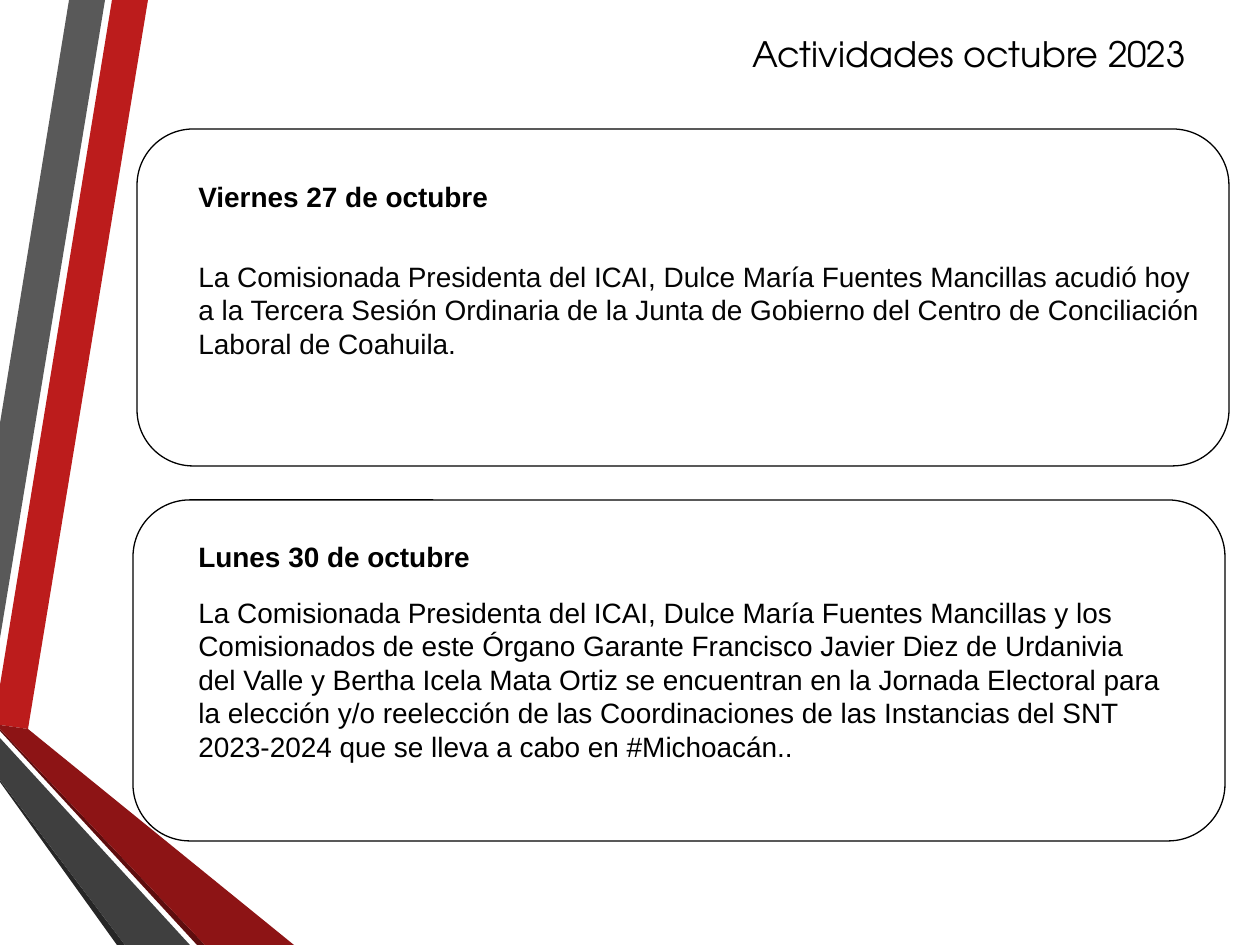
from dataclasses import dataclass

from pptx import Presentation
from pptx import util as u
from pptx.dml.color import RGBColor
from pptx.enum import shapes, text

PX = 914400 / 126  # EMU in one px


@dataclass(frozen=True)
class Theme:
    ink: str = "000000"
    soft_ink: str = "050505"
    red: str = "BC1C1C"
    dark_red: str = "8D1415"
    deep_red: str = "5E0D0E"
    grey: str = "595959"
    dark_grey: str = "3F3F3F"
    deep_grey: str = "262626"
    title_font: str = "TeX Gyre Adventor"
    body_font: str = "Arial"
    title_size: int = 20
    body_size: int = 16
    outline: float = 0.75


@dataclass(frozen=True)
class Box:
    left: int
    top: int
    width: int
    height: int

    def emu(self) -> list[u.Emu]:
        return [u.Emu(round(side * PX))
                for side in (self.left, self.top, self.width, self.height)]


@dataclass(frozen=True)
class Ribbon:
    color: str
    points: list[tuple[int, int]]


@dataclass(frozen=True)
class Activity:
    frame: Box
    date_box: Box
    date: str
    report_box: Box
    report: str
    report_color: str


THEME = Theme()

RIBBONS = [
    Ribbon(THEME.red, [(0, 685), (0, 725), (28, 729), (148, 0), (112, 0)]),
    Ribbon(THEME.grey, [(105, 0), (69, 0), (0, 423), (0, 638)]),
    Ribbon(THEME.deep_grey, [(0, 780), (0, 782), (117, 945), (125, 945)]),
    Ribbon(THEME.deep_red, [(0, 729), (0, 731), (197, 945), (205, 945)]),
    Ribbon(THEME.dark_red,
           [(0, 729), (205, 945), (294, 945), (28, 729), (0, 725)]),
    Ribbon(THEME.dark_grey, [(0, 780), (125, 945), (190, 945), (0, 738)]),
]

ACTIVITIES = [
    Activity(
        Box(137, 129, 1092, 337),
        Box(186, 173, 993, 46), "Viernes 27 de octubre",
        Box(186, 253, 1038, 113),
        "La Comisionada Presidenta del ICAI, Dulce María Fuentes Mancillas "
        "acudió hoy a la Tercera Sesión Ordinaria de la Junta de Gobierno "
        "del Centro de Conciliación Laboral de Coahuila.",
        THEME.soft_ink),
    Activity(
        Box(133, 500, 1092, 341),
        Box(186, 533, 993, 46), "Lunes 30 de octubre",
        Box(186, 589, 993, 183),
        "La Comisionada Presidenta del ICAI, Dulce María Fuentes Mancillas "
        "y los Comisionados de este Órgano Garante Francisco Javier Diez de "
        "Urdanivia del Valle y Bertha Icela Mata Ortiz se encuentran en la "
        "Jornada Electoral para la elección y/o reelección de las "
        "Coordinaciones de las Instancias del SNT 2023-2024 que se lleva a "
        "cabo en #Michoacán..",
        THEME.ink),
]


def draw_ribbon(slide, ribbon: Ribbon) -> None:
    start, *rest = ribbon.points
    builder = slide.shapes.build_freeform(*start, scale=PX)
    builder.add_line_segments(rest, close=True)
    band = builder.convert_to_shape()
    band.shadow.inherit = False
    band.fill.solid()
    band.fill.fore_color.rgb = RGBColor.from_string(ribbon.color)
    band.line.fill.background()


def draw_text(slide, box: Box, words: str, color: str = THEME.ink,
              font: str = THEME.body_font, size: int = THEME.body_size,
              bold: bool = False,
              align: text.PP_ALIGN = text.PP_ALIGN.LEFT) -> None:
    frame = slide.shapes.add_textbox(*box.emu()).text_frame
    frame.word_wrap = True
    frame.text = words
    paragraph = frame.paragraphs[0]
    paragraph.alignment = align
    run_font = paragraph.runs[0].font
    run_font.name = font
    run_font.size = u.Pt(size)
    run_font.bold = bold
    run_font.color.rgb = RGBColor.from_string(color)


def draw_activity(slide, activity: Activity) -> None:
    frame = slide.shapes.add_shape(
        shapes.MSO_SHAPE.FLOWCHART_ALTERNATE_PROCESS, *activity.frame.emu())
    frame.shadow.inherit = False
    frame.fill.background()
    frame.line.color.rgb = RGBColor.from_string(THEME.ink)
    frame.line.width = u.Pt(THEME.outline)
    draw_text(slide, activity.date_box, activity.date, bold=True)
    draw_text(slide, activity.report_box, activity.report,
              activity.report_color)


def main() -> None:
    deck = Presentation()
    deck.slide_width, deck.slide_height = u.Inches(10), u.Inches(7.5)
    slide = deck.slides.add_slide(deck.slide_layouts[6])
    for ribbon in RIBBONS:
        draw_ribbon(slide, ribbon)
    draw_text(slide, Box(709, 26, 520, 55), "Actividades octubre 2023",
              font=THEME.title_font, size=THEME.title_size,
              align=text.PP_ALIGN.CENTER)
    for activity in ACTIVITIES:
        draw_activity(slide, activity)
    deck.save("out.pptx")


if __name__ == "__main__":
    main()
